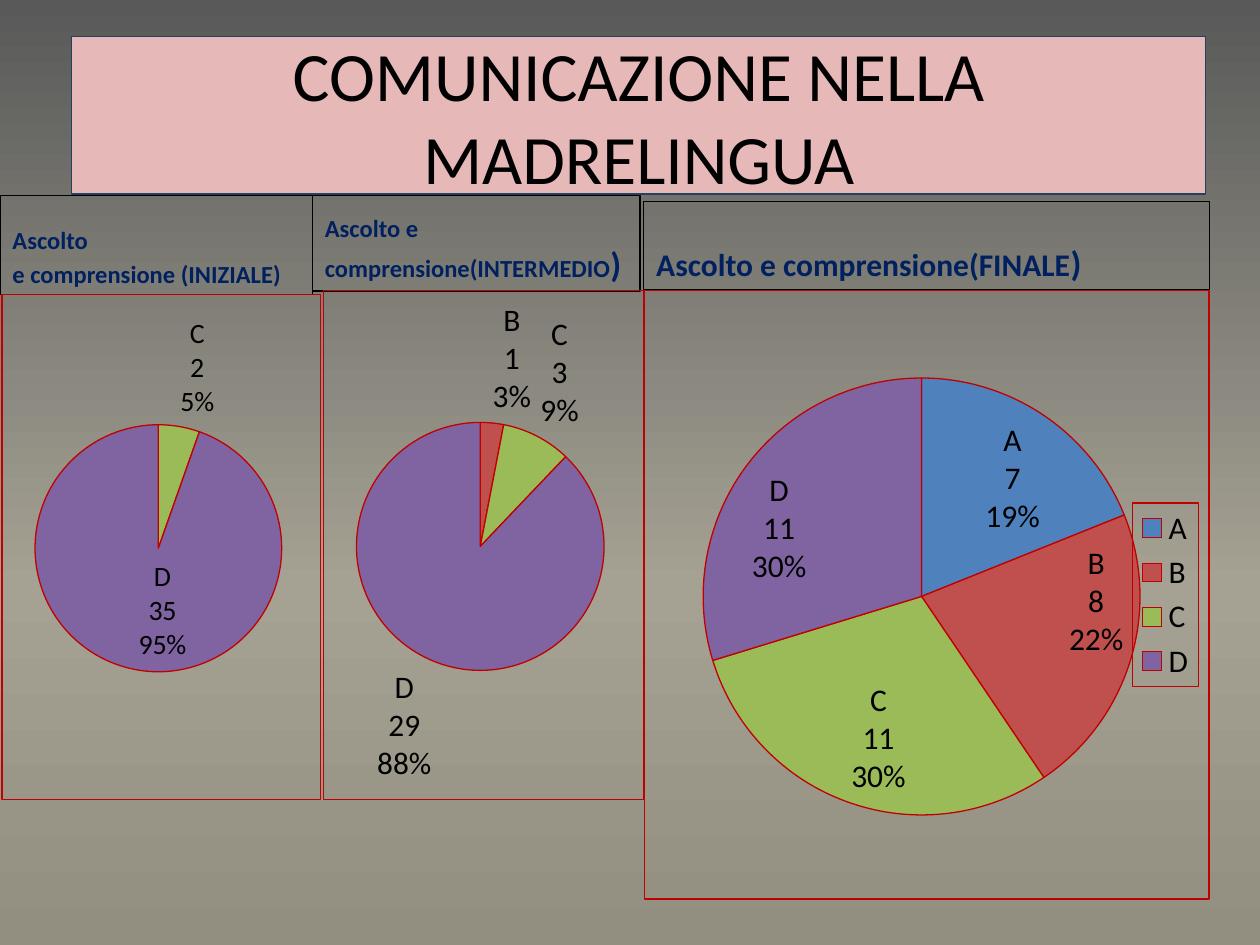
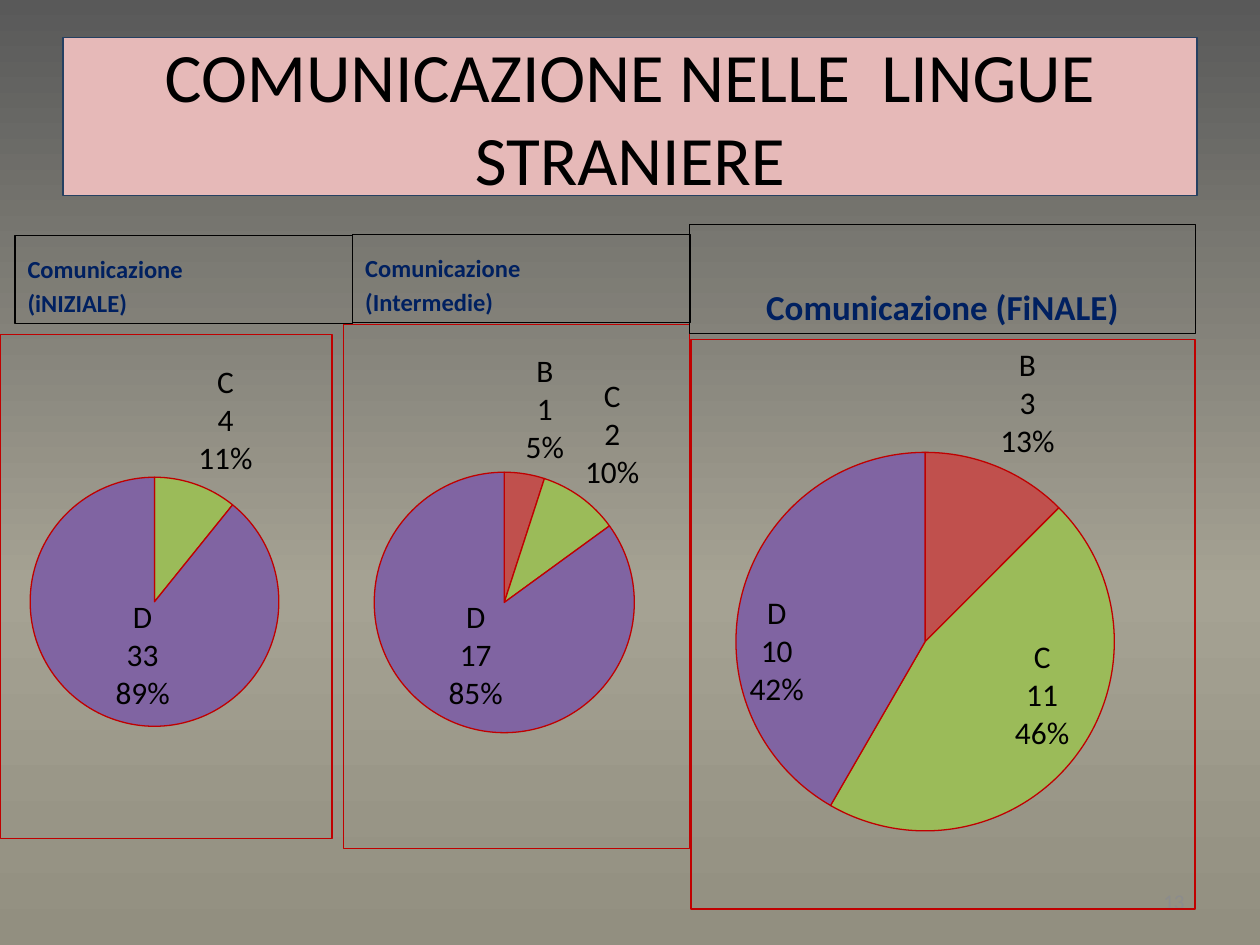
from lxml import etree
from pptx import Presentation
from pptx.chart.data import CategoryChartData
from pptx.dml.color import RGBColor
from pptx.enum.chart import XL_CHART_TYPE, XL_LEGEND_POSITION
from pptx.enum.shapes import MSO_SHAPE
from pptx.enum.text import MSO_ANCHOR, PP_ALIGN
from pptx.oxml import parse_xml
from pptx.oxml.ns import nsdecls, qn
from pptx.util import Inches, Pt

FONT = "Calibri"
BLACK, NAVY, RED, GREY = "000000", "002060", "C00000", "8C8C8C"
TITLE_FILL, TITLE_LINE = "E6B9B8", "254061"
LEVELS = {"A": "4F81BD", "B": "C0504D", "C": "9BBB59", "D": "8064A2"}
BACKGROUND = [(0, "595959"), (62, "A5A293"), (100, "928F80")]


def rgb(value):
    return RGBColor.from_string(value)


def write_box(slide, box, paragraphs, color, line=None, fill=None, bold=False,
              align=PP_ALIGN.LEFT, anchor=MSO_ANCHOR.BOTTOM, spacing=0):
    """Add a rectangle; each paragraph is a list of (text, size) runs."""
    panel = slide.shapes.add_shape(MSO_SHAPE.RECTANGLE, *map(Inches, box))
    panel.shadow.inherit = False
    if fill:
        panel.fill.solid()
        panel.fill.fore_color.rgb = rgb(fill)
    else:
        panel.fill.background()
    if line:
        panel.line.color.rgb = rgb(line)
        panel.line.width = Pt(0.75)
    else:
        panel.line.fill.background()
    frame = panel.text_frame
    frame.word_wrap = True
    frame.vertical_anchor = anchor
    for i, runs in enumerate(paragraphs):
        paragraph = frame.add_paragraph() if i else frame.paragraphs[0]
        paragraph.alignment = align
        paragraph.space_before = Pt(spacing * runs[0][1])
        for text, size in runs:
            run = paragraph.add_run()
            run.text = text
            run.font.name, run.font.size, run.font.bold = FONT, Pt(size), bold
            run.font.color.rgb = rgb(color)


# Per phase: heading box, heading paragraphs, alignment, chart box,
# counts for A-D, levels labelled outside the pie, label size, legend
slides = [
    {"title": "COMUNICAZIONE NELLA MADRELINGUA", "title_box": (0.57, 0.29, 9, 1.25),
     "plot": (0.104, 0.041, 0.774, 0.924), "page": None,
     "phases": [
         ((0, 1.55, 2.48, 0.79), [[("Ascolto", 14)], [("e comprensione (INIZIALE)", 14)]],
          PP_ALIGN.LEFT, (0.01, 2.33, 2.54, 4.02), (0, 0, 2, 35), "C", 16, False),
         ((2.48, 1.55, 2.6, 0.76), [[("Ascolto e comprensione(INTERMEDIO", 14), (")", 20)]],
          PP_ALIGN.LEFT, (2.56, 2.3, 2.55, 4.05), (0, 1, 3, 29), "BCD", 18, False),
         ((5.11, 1.6, 4.49, 0.7), [[("Ascolto e comprensione(FINALE", 18), (")", 20)]],
          PP_ALIGN.LEFT, (5.11, 2.3, 4.49, 4.84), (7, 8, 11, 11), "", 18, True)]},
    {"title": "COMUNICAZIONE NELLE  LINGUE STRANIERE", "title_box": (0.5, 0.3, 9, 1.25),
     "plot": (0.089, 0.165, 0.751, 0.731), "page": "13",
     "phases": [
         ((0.12, 1.87, 2.68, 0.7), [[("Comunicazione", 14)], [("(iNIZIALE)", 14)]],
          PP_ALIGN.LEFT, (0, 2.65, 2.64, 4.01), (0, 0, 4, 33), "C", 18, False),
         ((2.8, 1.86, 2.68, 0.7), [[("Comunicazione", 14)], [("(Intermedie)", 14)]],
          PP_ALIGN.LEFT, (2.72, 2.57, 2.76, 4.17), (0, 1, 2, 17), "BC", 18, False),
         ((5.47, 1.78, 4.02, 0.87), [[("Comunicazione (FiNALE)", 20)]],
          PP_ALIGN.CENTER, (5.48, 2.69, 4.01, 4.53), (0, 3, 11, 10), "B", 18, False)]},
]

prs = Presentation()
prs.slide_width, prs.slide_height = Inches(10), Inches(7.5)

# Gradient background shared through the master
stops = "".join(f'<a:gs pos="{pos * 1000}"><a:srgbClr val="{color}"/></a:gs>'
                for pos, color in BACKGROUND)
master_content = prs.slide_master.element.find(qn("p:cSld"))
for old_background in master_content.findall(qn("p:bg")):
    master_content.remove(old_background)
master_content.insert(0, parse_xml(
    f'<p:bg {nsdecls("p", "a")}><p:bgPr><a:gradFill><a:gsLst>{stops}</a:gsLst>'
    '<a:lin ang="5400000" scaled="0"/></a:gradFill><a:effectLst/></p:bgPr></p:bg>'))

red_border = (f'<c:spPr {nsdecls("c", "a")}><a:noFill/><a:ln w="9525"><a:solidFill>'
              f'<a:srgbClr val="{RED}"/></a:solidFill></a:ln></c:spPr>')
label_content = ('<c:showLegendKey val="0"/><c:showVal val="1"/><c:showCatName val="1"/>'
                 '<c:showSerName val="0"/><c:showPercent val="1"/>'
                 '<c:showBubbleSize val="0"/><c:separator>\n</c:separator>')

for content in slides:
    slide = prs.slides.add_slide(prs.slide_layouts[6])
    write_box(slide, content["title_box"], [[(content["title"], 39.6)]], BLACK, TITLE_LINE,
              TITLE_FILL, align=PP_ALIGN.CENTER, anchor=MSO_ANCHOR.MIDDLE)
    if content["page"]:
        write_box(slide, (7.17, 6.95, 2.33, 0.4), [[(content["page"], 12)]], GREY,
                  align=PP_ALIGN.RIGHT, anchor=MSO_ANCHOR.MIDDLE)

    for heading_box, heading, align, pie_box, counts, outside, size, legend in content["phases"]:
        write_box(slide, heading_box, heading, NAVY, BLACK, bold=True, align=align, spacing=0.2)

        data = CategoryChartData()
        data.categories = list(LEVELS)
        data.add_series("Series 1", counts)
        pie = slide.shapes.add_chart(XL_CHART_TYPE.PIE, *map(Inches, pie_box), data).chart
        pie.has_title = False
        pie.font.name, pie.font.size = FONT, Pt(size)
        pie.font.color.rgb = rgb(BLACK)
        pie.plots[0].vary_by_categories = True
        series = pie.plots[0].series[0]

        labels = ""
        for i, (level, color) in enumerate(LEVELS.items()):
            point = series.points[i].format
            point.fill.solid()
            point.fill.fore_color.rgb = rgb(color)
            point.line.color.rgb = rgb(RED)
            point.line.width = Pt(0.75)
            position = "outEnd" if level in outside else "inEnd"
            label = '<c:delete val="1"/>'
            if counts[i]:
                label = f'<c:dLblPos val="{position}"/>{label_content}'
            labels += f'<c:dLbl><c:idx val="{i}"/>{label}</c:dLbl>'
        series._element.find(qn("c:cat")).addprevious(parse_xml(
            f'<c:dLbls {nsdecls("c")}>{labels}{label_content}'
            '<c:showLeaderLines val="0"/></c:dLbls>'))

        pie.has_legend = legend
        if legend:
            pie.legend.position = XL_LEGEND_POSITION.RIGHT
            pie.legend.include_in_layout = False
            pie.legend._element.append(parse_xml(red_border))

        # Fixed plot area and red frame
        chart_part = pie._chartSpace.find(qn("c:chart"))
        chart_part.addnext(parse_xml(red_border))
        plot_area = chart_part.find(qn("c:plotArea"))
        for old_layout in plot_area.findall(qn("c:layout")):
            plot_area.remove(old_layout)
        layout = etree.Element(qn("c:layout"))
        manual = etree.SubElement(layout, qn("c:manualLayout"))
        settings = [("layoutTarget", "inner"), ("xMode", "edge"), ("yMode", "edge")]
        for tag, value in settings + list(zip("xywh", content["plot"])):
            etree.SubElement(manual, qn(f"c:{tag}")).set("val", str(value))
        plot_area.insert(0, layout)

prs.save("out.pptx")
